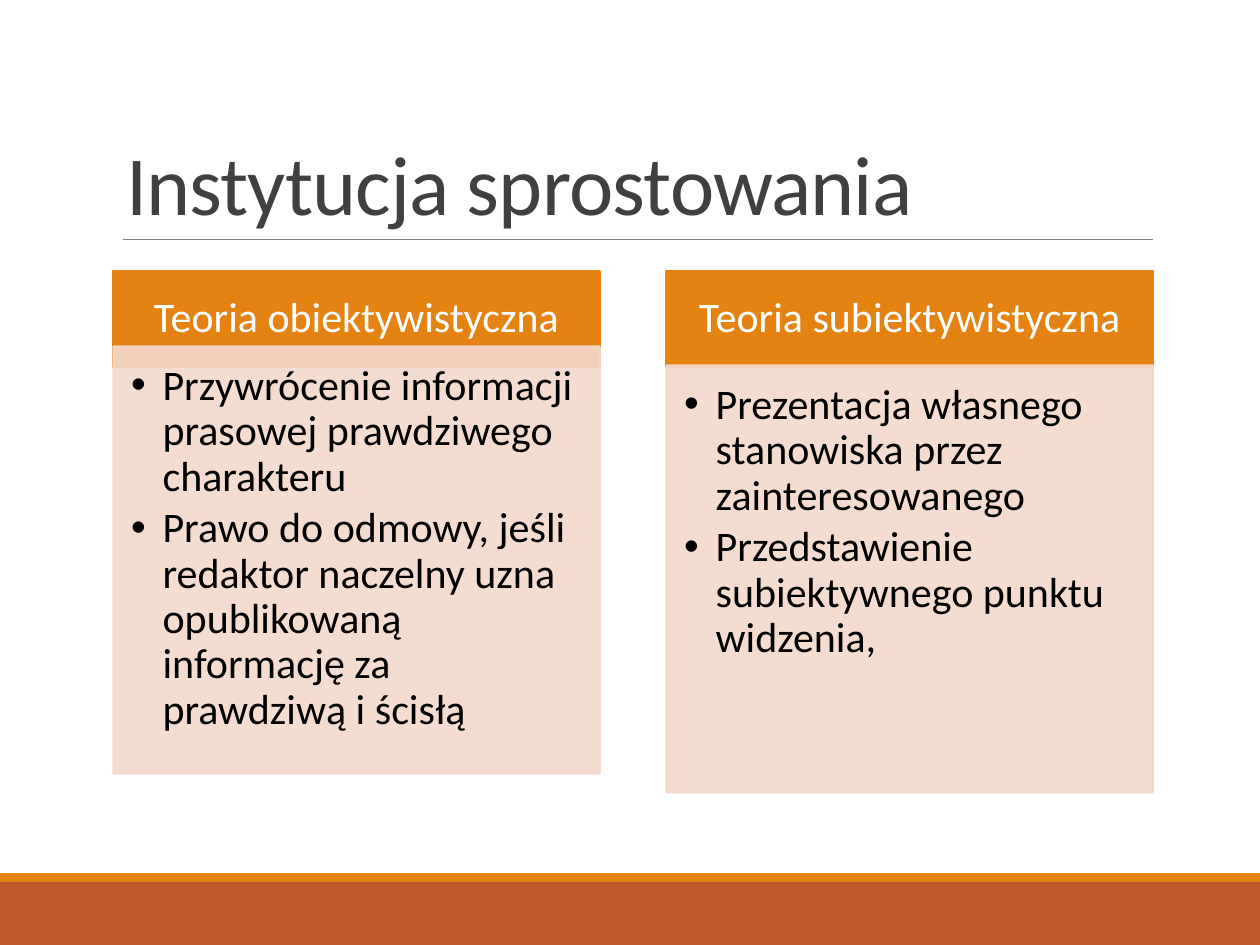
from lxml import etree
from pptx import Presentation
from pptx.dml.color import RGBColor
from pptx.enum.shapes import MSO_CONNECTOR, MSO_SHAPE
from pptx.enum.text import MSO_ANCHOR, MSO_AUTO_SIZE, PP_ALIGN
from pptx.oxml.ns import qn
from pptx.util import Inches, Pt

COMPARISON_LAYOUT = 4
RECTANGLE = MSO_SHAPE.RECTANGLE
STRAIGHT = MSO_CONNECTOR.STRAIGHT
TOP, MIDDLE, BOTTOM = MSO_ANCHOR.TOP, MSO_ANCHOR.MIDDLE, MSO_ANCHOR.BOTTOM
LEFT, CENTER = PP_ALIGN.LEFT, PP_ALIGN.CENTER
NO_AUTOFIT = MSO_AUTO_SIZE.NONE

FONT = "Calibri"
COLORS = {
    "orange": "E48312",
    "rust": "BD582C",
    "peach": "F5D9CC",
    "rule": "808080",
    "title": "404040",
    "heading": "FFFFFF",
    "body": "000000",
}
COLUMN_LEFT, COLUMN_STEP, COLUMN_WIDTH = 0.9, 4.39, 3.86
HEADING_TOP, HEADING_HEIGHT = 2.15, 0.76
LIST_HEIGHT = 3.39
THEORIES = [
    ("Teoria obiektywistyczna", 2.75, [
        "Przywrócenie informacji prasowej prawdziwego charakteru",
        "Prawo do odmowy, jeśli redaktor naczelny uzna opublikowaną informację za prawdziwą i ścisłą",
    ]),
    ("Teoria subiektywistyczna", 2.9, [
        "Prezentacja własnego stanowiska przez zainteresowanego",
        "Przedstawienie subiektywnego punktu widzenia,",
    ]),
]


def rgb(name):
    return RGBColor.from_string(COLORS[name])


def place(placeholder, left, top, width, height, anchor, insets):
    """Move a placeholder and set its text frame."""
    placeholder.left, placeholder.top = Inches(left), Inches(top)
    placeholder.width, placeholder.height = Inches(width), Inches(height)
    frame = placeholder.text_frame
    frame.auto_size, frame.word_wrap = NO_AUTOFIT, True
    frame.vertical_anchor = anchor
    (frame.margin_left, frame.margin_top,
     frame.margin_right, frame.margin_bottom) = map(Inches, insets)


def style_paragraph(paragraph, size, color, align=LEFT, spacing=0.9, after=0):
    """Set the spacing, alignment and font of a paragraph."""
    paragraph.alignment = align
    paragraph.line_spacing = spacing
    paragraph.space_before, paragraph.space_after = Pt(0), Pt(after)
    font = paragraph.font
    font.name, font.size, font.bold = FONT, Pt(size), False
    font.color.rgb = rgb(color)


def paint(shape, color, opacity=100):
    """Give a shape a fill and a matching outline."""
    shape.fill.solid()
    shape.fill.fore_color.rgb = rgb(color)
    shape.line.color.rgb = rgb(color)
    shape.line.width = Pt(1.25)
    if opacity < 100:
        for tint in shape._element.spPr.iter(qn("a:srgbClr")):
            etree.SubElement(tint, qn("a:alpha"), val=str(opacity * 1000))


def add_band(slide, top, height, color):
    """Add a full-width footer band."""
    band = slide.shapes.add_shape(
        RECTANGLE, 0, Inches(top), Inches(10), Inches(height))
    band.shadow.inherit = False
    band.fill.solid()
    band.fill.fore_color.rgb = rgb(color)
    band.line.fill.background()


def add_title_rule(slide):
    """Add the thin line below the title."""
    rule = slide.shapes.add_connector(
        STRAIGHT, Inches(0.98), Inches(1.9), Inches(9.15), Inches(1.9))
    rule.line.color.rgb = rgb("rule")
    rule.line.width = Pt(0.5)
    etree.SubElement(rule._element.spPr, qn("a:effectLst"))


def fill_title(title, text):
    """Write the slide title."""
    place(title, 0.9, 0.31, 8.25, 1.59, BOTTOM, (0.1, 0.05, 0.1, 0.05))
    title.text_frame.text = text
    paragraph = title.text_frame.paragraphs[0]
    style_paragraph(paragraph, 48, "title", spacing=0.85)
    paragraph.runs[0]._r.get_or_add_rPr().set("spc", "-50")


def fill_heading(heading, left, text):
    """Write the heading of a theory."""
    place(heading, left, HEADING_TOP, COLUMN_WIDTH, HEADING_HEIGHT,
          MIDDLE, (0.19, 0.11, 0.19, 0.11))
    paint(heading, "orange")
    heading.text_frame.text = text
    style_paragraph(heading.text_frame.paragraphs[0], 24, "heading", CENTER)


def fill_list(listing, left, top, points):
    """Write the bulleted points of a theory."""
    place(listing, left, top, COLUMN_WIDTH, LIST_HEIGHT,
          TOP, (0.14, 0.14, 0.19, 0.21))
    paint(listing, "peach", 90)
    listing.text_frame.text = "\n".join(points)
    for paragraph in listing.text_frame.paragraphs:
        properties = paragraph._p.get_or_add_pPr()
        properties.set("marL", str(Inches(0.25)))
        properties.set("indent", str(Inches(-0.25)))
        etree.SubElement(properties, qn("a:buChar"), char="•")
        style_paragraph(paragraph, 24, "body", after=3.6)


def main():
    presentation = Presentation()
    presentation.slide_width, presentation.slide_height = Inches(10), Inches(7.5)
    slide = presentation.slides.add_slide(
        presentation.slide_layouts[COMPARISON_LAYOUT])
    add_band(slide, 7, 0.5, "rust")
    add_band(slide, 6.93, 0.07, "orange")
    add_title_rule(slide)
    title, *boxes = slide.placeholders
    fill_title(title, "Instytucja sprostowania")
    columns = zip(THEORIES, boxes[::2], boxes[1::2])
    for index, ((name, list_top, points), heading, listing) in enumerate(columns):
        left = COLUMN_LEFT + index * COLUMN_STEP
        fill_heading(heading, left, name)
        fill_list(listing, left, list_top, points)
    presentation.save("out.pptx")


if __name__ == "__main__":
    main()
